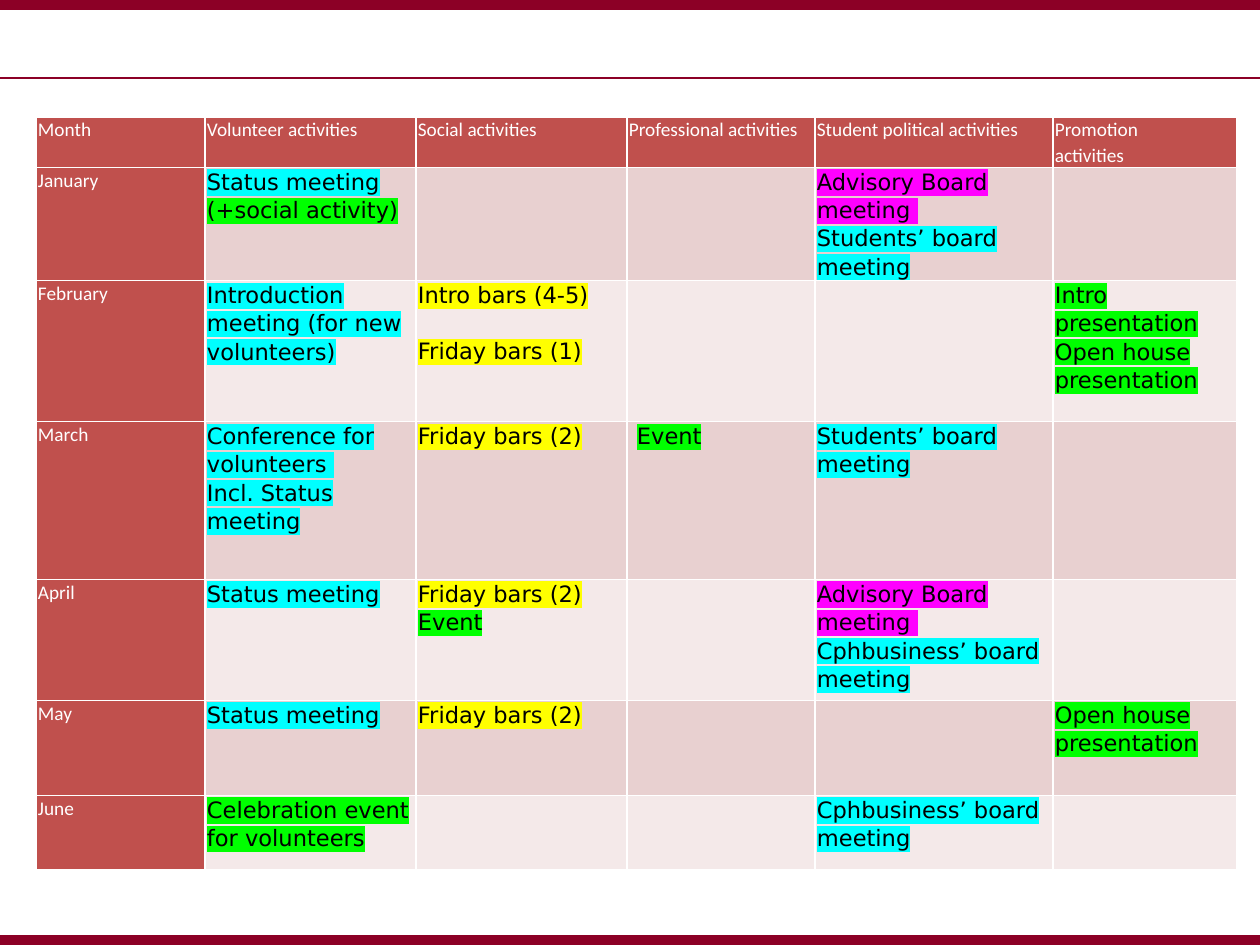
from lxml.etree import SubElement
from pptx import Presentation
from pptx.dml.color import RGBColor
from pptx.enum.shapes import MSO_CONNECTOR
from pptx.oxml.ns import qn
from pptx.util import Pt

PX = 7890
SLIDE_W, SLIDE_H = 1260, 945
COLORS = {
    "rule": "8C0026", "head": "C0504D", "odd": "E8D0D0", "even": "F4E9E9",
    "white": "FFFFFF", "black": "000000",
    "cyan": "00FFFF", "green": "00FF00", "yellow": "FFFF00", "magenta": "FF00FF",
}
RULES = [(78, 1), (5, 6), (940, 6)]
TABLE_LEFT, TABLE_TOP = 36, 117
COL_WIDTHS = [169, 211, 211, 188, 238, 184]
ROW_HEIGHTS = [50, 113, 141, 158, 121, 95, 74]
MARGIN, EVENT_INDENT = 2, 10
BLANK_LINE = 17.5

HEADERS = [
    ["Month"], ["Volunteer activities"], ["Social activities"],
    ["Professional activities"], ["Student political activities"],
    ["Promotion", "activities"],
]
VOLUNTEER, SOCIAL, PROFESSIONAL, POLITICAL, PROMOTION = range(1, 6)
STATUS = ("Status meeting", "cyan")
FRIDAY = ("Friday bars (2)", "yellow")
EVENT = ("Event", "green")
ADVISORY = ("Advisory Board meeting ", "magenta")
STUDENTS = ("Students’ board meeting", "cyan")
SCHOOL = ("Cphbusiness’ board meeting", "cyan")
OPEN_HOUSE = ("Open house presentation", "green")
MONTHS = [
    ("January", {
        VOLUNTEER: [STATUS, ("(+social activity)", "green")],
        POLITICAL: [ADVISORY, STUDENTS]}),
    ("February", {
        VOLUNTEER: [("Introduction meeting (for new volunteers)", "cyan")],
        SOCIAL: [("Intro bars (4-5)", "yellow"), ("Friday bars (1)", "yellow")],
        PROMOTION: [("Intro presentation", "green"), OPEN_HOUSE]}),
    ("March", {
        VOLUNTEER: [("Conference for volunteers ", "cyan"),
                    ("Incl. Status meeting", "cyan")],
        SOCIAL: [FRIDAY], PROFESSIONAL: [EVENT], POLITICAL: [STUDENTS]}),
    ("April", {
        VOLUNTEER: [STATUS], SOCIAL: [FRIDAY, EVENT],
        POLITICAL: [ADVISORY, SCHOOL]}),
    ("May", {
        VOLUNTEER: [STATUS], SOCIAL: [FRIDAY], PROMOTION: [OPEN_HOUSE]}),
    ("June", {
        VOLUNTEER: [("Celebration event for volunteers", "green")],
        POLITICAL: [SCHOOL]}),
]


def rgb(name):
    return RGBColor.from_string(COLORS[name])


def add_color(parent, name):
    SubElement(parent, qn("a:srgbClr"), val=COLORS[name])


def add_rule(s, y, weight):
    line = s.shapes.add_connector(
        MSO_CONNECTOR.STRAIGHT, 0, y * PX, SLIDE_W * PX, y * PX)
    line.line.color.rgb = rgb("rule")
    line.line.width = Pt(weight)
    SubElement(line._element.spPr, qn("a:effectLst"))


def format_cell(cell, fill):
    cell.margin_left = cell.margin_right = MARGIN * PX
    cell.margin_top = cell.margin_bottom = 0
    tcPr = cell._tc.get_or_add_tcPr()
    for side in ("a:lnL", "a:lnR", "a:lnT", "a:lnB"):
        ln = SubElement(tcPr, qn(side), w=str(Pt(1)))
        add_color(SubElement(ln, qn("a:solidFill")), "white")
    cell.fill.solid()
    cell.fill.fore_color.rgb = rgb(fill)


def write_cell(cell, lines, font, size, color):
    tf = cell.text_frame
    for i, (text, mark) in enumerate(lines):
        p = tf.add_paragraph() if i else tf.paragraphs[0]
        p.line_spacing = 1.07
        p.font.name = font
        p.font.size = Pt(size)
        p.font.color.rgb = rgb(color)
        r = p.add_run()
        r.text = text
        if mark:
            rPr = r._r.get_or_add_rPr()
            add_color(SubElement(rPr, qn("a:highlight")), mark)


def write_label(cell, lines):
    format_cell(cell, "head")
    write_cell(cell, [(text, None) for text in lines], "Calibri", 12, "white")


def add_calendar(s):
    table = s.shapes.add_table(
        len(ROW_HEIGHTS), len(COL_WIDTHS), TABLE_LEFT * PX, TABLE_TOP * PX,
        sum(COL_WIDTHS) * PX, sum(ROW_HEIGHTS) * PX).table
    table.first_row = table.horz_banding = False
    for column, width in zip(table.columns, COL_WIDTHS):
        column.width = width * PX
    for row, height in zip(table.rows, ROW_HEIGHTS):
        row.height = height * PX

    for col, lines in enumerate(HEADERS):
        write_label(table.cell(0, col), lines)
    for row, (month, activities) in enumerate(MONTHS, 1):
        write_label(table.cell(row, 0), [month])
        for col in range(1, len(HEADERS)):
            cell = table.cell(row, col)
            format_cell(cell, "odd" if row % 2 else "even")
            write_cell(cell, activities.get(col, []), "DejaVu Sans", 14, "black")
            if col == PROFESSIONAL and col in activities:
                cell.margin_left = EVENT_INDENT * PX
            if col == SOCIAL and month == "February":
                cell.text_frame.paragraphs[1].space_before = Pt(BLANK_LINE)


def main():
    prs = Presentation()
    prs.slide_width = SLIDE_W * PX
    prs.slide_height = SLIDE_H * PX
    s = prs.slides.add_slide(prs.slide_layouts[6])
    for y, weight in RULES:
        add_rule(s, y, weight)
    add_calendar(s)
    prs.save("out.pptx")


if __name__ == "__main__":
    main()
